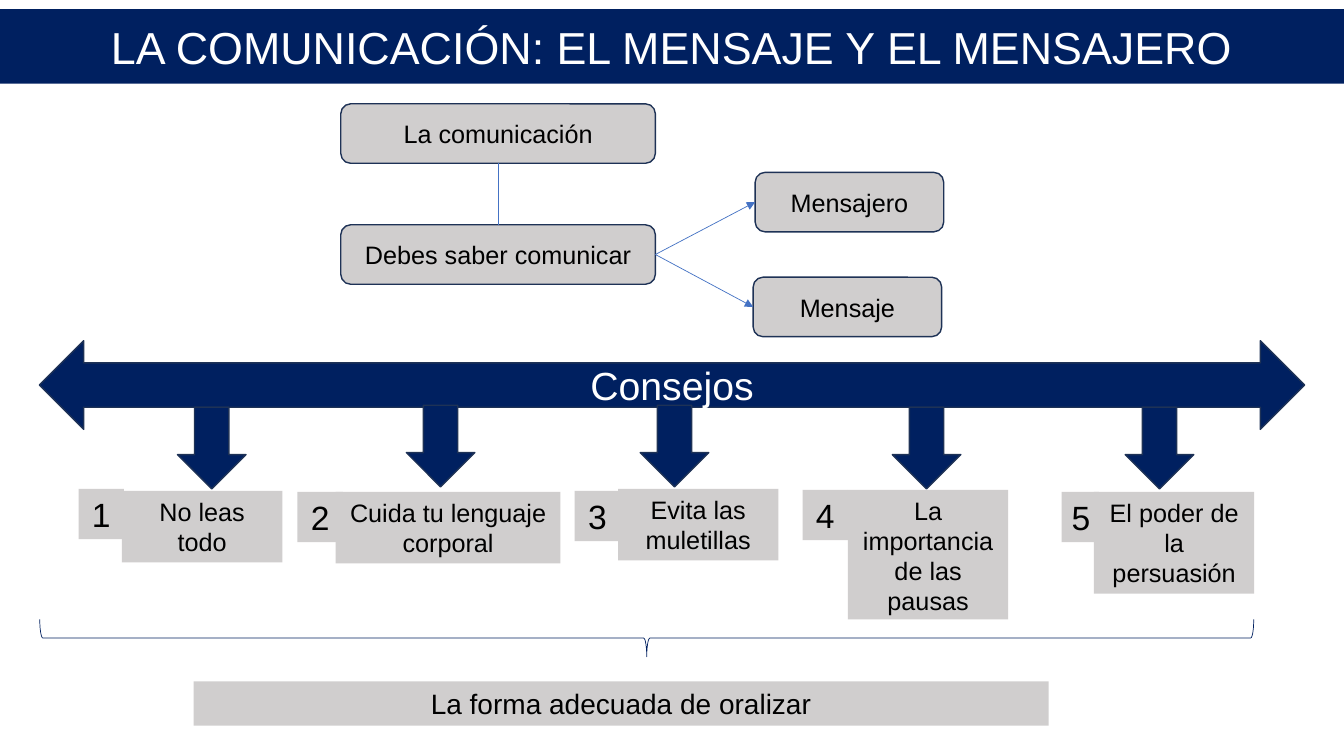
from lxml import etree
from pptx import Presentation
from pptx.dml.color import RGBColor
from pptx.enum.shapes import MSO_CONNECTOR, MSO_SHAPE
from pptx.enum.text import MSO_ANCHOR, PP_ALIGN
from pptx.oxml.ns import qn
from pptx.util import Inches, Pt

RECT = MSO_SHAPE.RECTANGLE
ROUNDED = MSO_SHAPE.ROUNDED_RECTANGLE
DOUBLE_ARROW = MSO_SHAPE.LEFT_RIGHT_ARROW
DOWN_ARROW = MSO_SHAPE.DOWN_ARROW
BRACE = MSO_SHAPE.LEFT_BRACE
STRAIGHT = MSO_CONNECTOR.STRAIGHT
CENTER = PP_ALIGN.CENTER
TOP, MIDDLE = MSO_ANCHOR.TOP, MSO_ANCHOR.MIDDLE
TOP_SIDE, LEFT_SIDE, BOTTOM_SIDE, RIGHT_SIDE = range(4)

COLORS = {
    "navy": "002060",
    "outline": "1E3256",
    "gray": "D0CECE",
    "link": "4472C4",
    "white": "FFFFFF",
    "black": "000000",
}

# number, its left, top and width; tip, its left, top, width and height; arrow left and top
TIPS = [
    ("1", 0.78, 4.85, 0.45, "No leas todo", 1.21, 4.87, 1.59, 0.71, 1.76, 4.04),
    ("2", 2.95, 4.88, 0.45, "Cuida tu lenguaje corporal", 3.33, 4.88, 2.23, 0.71, 4.03, 4.02),
    ("3", 5.7, 4.87, 0.45, "Evita las muletillas", 6.13, 4.85, 1.59, 0.71, 6.35, 4.02),
    ("4", 7.96, 4.86, 0.45, "La importancia de las pausas", 8.41, 4.86, 1.59, 1.31, 8.85, 4.04),
    ("5", 10.53, 4.88, 0.37, "El poder de la persuasión", 10.85, 4.88, 1.59, 1.01, 11.16, 4.04),
]


def rgb(name):
    return RGBColor.from_string(COLORS[name])


def write(shape, text, size=18, color="black", anchor=MIDDLE):
    frame = shape.text_frame
    frame.word_wrap = True
    frame.vertical_anchor = anchor
    paragraph = frame.paragraphs[0]
    paragraph.alignment = CENTER
    run = paragraph.add_run()
    run.text = text
    run.font.name = "Arial"
    run.font.size = Pt(size)
    run.font.color.rgb = rgb(color)


def add_block(slide, kind, left, top, width, height, fill, line=None, line_width=1):
    block = slide.shapes.add_shape(
        kind, Inches(left), Inches(top), Inches(width), Inches(height))
    block.shadow.inherit = False
    block.fill.solid()
    block.fill.fore_color.rgb = rgb(fill)
    if line:
        block.line.color.rgb = rgb(line)
        block.line.width = Pt(line_width)
    else:
        block.line.fill.background()
    return block


def add_concept(slide, text, left, top, width):
    concept = add_block(slide, ROUNDED, left, top, width, 0.59, "gray", "outline")
    write(concept, text)
    return concept


def add_label(slide, text, left, top, width, height, **text_format):
    label = add_block(slide, RECT, left, top, width, height, "gray")
    write(label, text, anchor=TOP, **text_format)


def link(slide, start, start_side, end, end_side, arrow=False):
    connector = slide.shapes.add_connector(STRAIGHT, 0, 0, 0, 0)
    connector.begin_connect(start, start_side)
    connector.end_connect(end, end_side)
    connector.line.color.rgb = rgb("link")
    connector.line.width = Pt(0.5)
    if arrow:
        outline = connector.line._get_or_add_ln()
        etree.SubElement(outline, qn("a:tailEnd"), type="triangle")
    etree.SubElement(connector._element.spPr, qn("a:effectLst"))


def add_concept_map(slide):
    communication = add_concept(slide, "La comunicación", 3.38, 1.03, 3.12)
    skill = add_concept(slide, "Debes saber comunicar", 3.38, 2.23, 3.12)
    messenger = add_concept(slide, "Mensajero", 7.49, 1.71, 1.87)
    message = add_concept(slide, "Mensaje", 7.47, 2.75, 1.87)
    for target in (messenger, message):
        link(slide, skill, RIGHT_SIDE, target, LEFT_SIDE, arrow=True)
    link(slide, communication, BOTTOM_SIDE, skill, TOP_SIDE)


def add_tips(slide):
    advice = add_block(slide, DOUBLE_ARROW, 0.39, 3.38, 12.55, 0.88, "navy", "outline")
    write(advice, "Consejos", size=28, color="white")
    for (number, number_left, number_top, number_width,
         tip, left, top, width, height, arrow_left, arrow_top) in TIPS:
        add_block(slide, DOWN_ARROW, arrow_left, arrow_top, 0.68, 0.81, "navy", "outline")
        add_label(slide, tip, left, top, width, height)
        add_label(slide, number, number_left, number_top, number_width, 0.5, size=24)


def add_conclusion(slide):
    add_label(slide, "La forma adecuada de oralizar", 1.92, 6.76, 8.48, 0.44, size=20)
    brace = add_block(slide, BRACE, 6.23, 0.31, 0.37, 12.04, "white", "navy", 0.5)
    brace.rotation = 270


def main():
    presentation = Presentation()
    presentation.slide_width = Inches(13.33)
    presentation.slide_height = Inches(7.5)
    slide = presentation.slides.add_slide(presentation.slide_layouts[6])
    title = add_block(slide, RECT, 0, 0.09, 13.33, 0.74, "navy")
    write(title, "LA COMUNICACIÓN: EL MENSAJE Y EL MENSAJERO", size=32, color="white")
    add_concept_map(slide)
    add_tips(slide)
    add_conclusion(slide)
    presentation.save("out.pptx")


if __name__ == "__main__":
    main()
